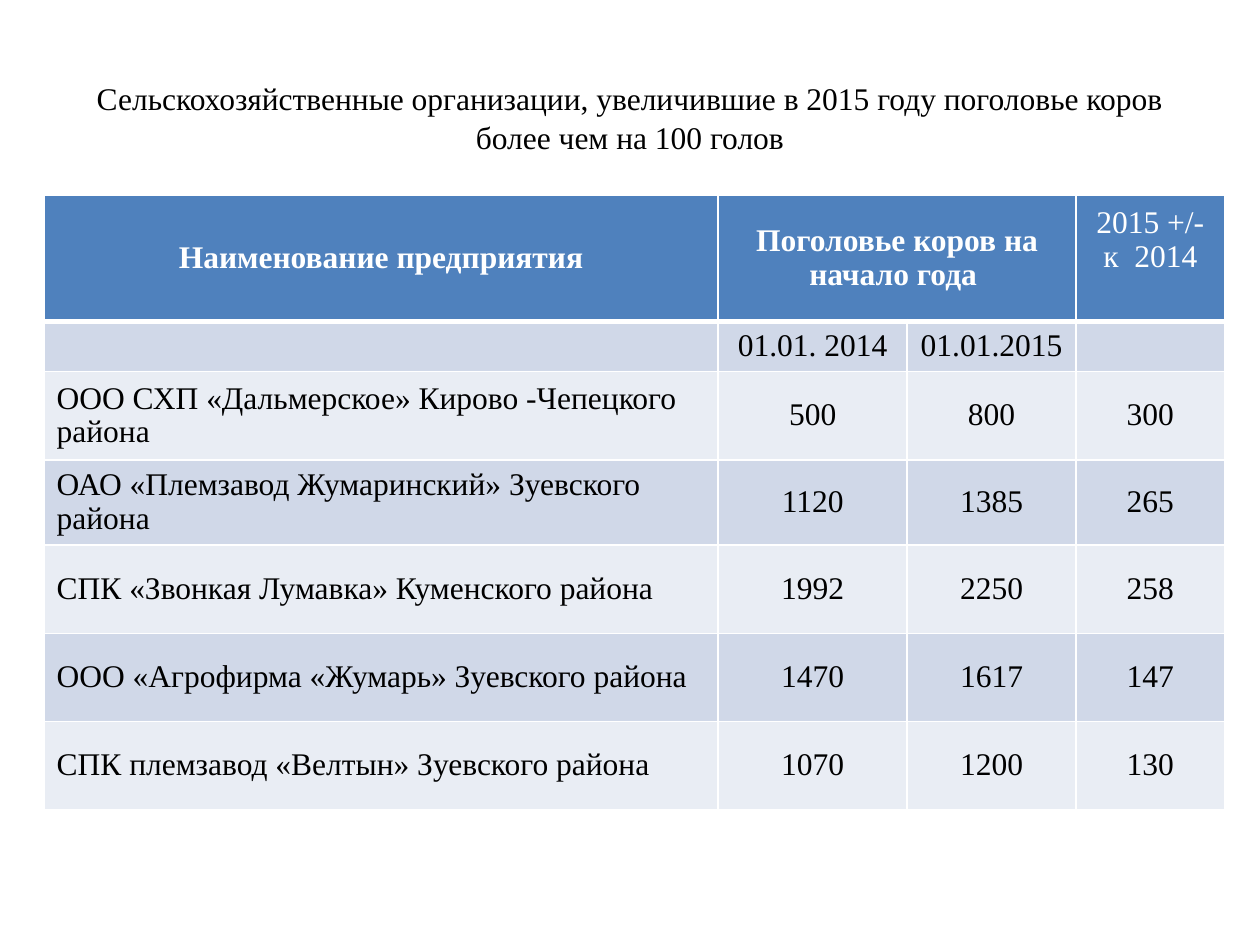
from lxml import etree
from pptx import Presentation
from pptx.dml.color import RGBColor
from pptx.enum.text import MSO_ANCHOR, PP_ALIGN
from pptx.oxml.ns import qn
from pptx.util import Inches, Pt

LEFT, CENTER = PP_ALIGN.LEFT, PP_ALIGN.CENTER
MIDDLE = MSO_ANCHOR.MIDDLE
WHITE = RGBColor(0xFF, 0xFF, 0xFF)
BLACK = RGBColor(0, 0, 0)
HEADER_BLUE = RGBColor(0x4F, 0x81, 0xBD)
BAND_DARK = RGBColor(0xD0, 0xD8, 0xE8)
BAND_LIGHT = RGBColor(0xE9, 0xED, 0xF4)


def write(frame, text, color=BLACK, bold=False, align=CENTER, spacing=0.96):
    paragraph = frame.paragraphs[0]
    paragraph.alignment = align
    paragraph.line_spacing = spacing
    run = paragraph.add_run()
    run.text = text
    run.font.name = "Times New Roman"
    run.font.size = Pt(18)
    run.font.bold = bold
    run.font.color.rgb = color


def add_borders(cell, bottom_width):
    properties = cell._tc.get_or_add_tcPr()
    widths = {"a:lnL": 1, "a:lnR": 1, "a:lnT": 1, "a:lnB": bottom_width}
    for position, (side, width) in enumerate(widths.items()):
        line = etree.Element(qn(side), w=str(Pt(width)))
        fill = etree.SubElement(line, qn("a:solidFill"))
        etree.SubElement(fill, qn("a:srgbClr"), val=str(WHITE))
        properties.insert(position, line)


presentation = Presentation()
presentation.slide_width = Inches(10)
presentation.slide_height = Inches(7.5)
slide = presentation.slides.add_slide(presentation.slide_layouts[6])

title = slide.shapes.add_textbox(Inches(0.5), Inches(0.3), Inches(9), Inches(1.25))
title.text_frame.word_wrap = True
title.text_frame.vertical_anchor = MIDDLE
write(
    title.text_frame,
    "Сельскохозяйственные организации, увеличившие в 2015 году поголовье коров более чем на 100 голов",
    spacing=1.05,
)

herd_rows = [
    ["Наименование предприятия", "Поголовье коров на начало года ", "", "2015 +/- к  2014"],
    ["", "01.01. 2014", "01.01.2015 ", ""],
    ["ООО СХП «Дальмерское» Кирово -Чепецкого района", "500", "800", "300"],
    ["ОАО «Племзавод Жумаринский» Зуевского района", "1120", "1385", "265"],
    ["СПК «Звонкая Лумавка» Куменского района", "1992", "2250", "258"],
    ["ООО «Агрофирма «Жумарь» Зуевского района", "1470", "1617", "147"],
    ["СПК племзавод «Велтын» Зуевского района", "1070", "1200", "130"],
]
column_widths = [5.35, 1.5, 1.34, 1.18]
row_heights = [1, 0.4, 0.7, 0.65, 0.7, 0.7, 0.7]

herd = slide.shapes.add_table(
    len(row_heights), len(column_widths), Inches(0.35), Inches(1.55),
    Inches(sum(column_widths)), Inches(sum(row_heights)),
).table
for column, width in zip(herd.columns, column_widths):
    column.width = Inches(width)
for row, height in zip(herd.rows, row_heights):
    row.height = Inches(height)
herd.cell(0, 1).merge(herd.cell(0, 2))

for r, values in enumerate(herd_rows):
    header = r == 0
    for c, value in enumerate(values):
        cell = herd.cell(r, c)
        cell.vertical_anchor = MIDDLE
        if r > 1 and c in (1, 2):
            cell.margin_left = cell.margin_right = 0
            cell.margin_top = cell.margin_bottom = 0
        cell.fill.solid()
        cell.fill.fore_color.rgb = HEADER_BLUE if header else BAND_DARK if r % 2 else BAND_LIGHT
        add_borders(cell, 3 if header else 1)
        if value:
            write(
                cell.text_frame, value,
                color=WHITE if header else BLACK,
                bold=header and c < 3,
                align=LEFT if r > 1 and c == 0 else CENTER,
            )
herd.cell(0, 3).margin_bottom = Inches(0.33)

presentation.save("out.pptx")
